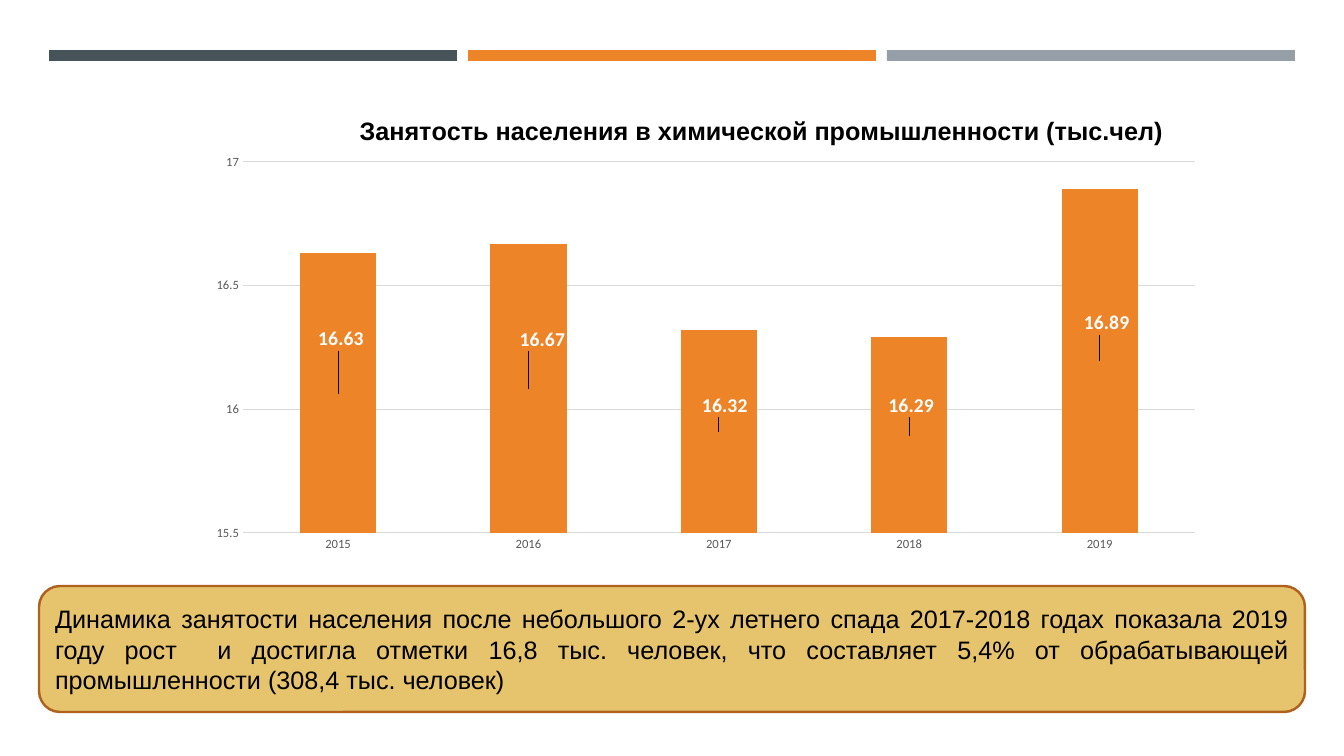
from lxml.etree import SubElement
from pptx import Presentation
from pptx.chart.data import CategoryChartData
from pptx.dml.color import RGBColor
from pptx.enum.chart import XL_CHART_TYPE, XL_LABEL_POSITION, XL_TICK_MARK
from pptx.enum.shapes import MSO_SHAPE
from pptx.enum.text import MSO_ANCHOR, PP_ALIGN
from pptx.oxml.ns import qn
from pptx.util import Pt

SLATE = RGBColor(0x46, 0x53, 0x59)
ORANGE = RGBColor(0xED, 0x84, 0x28)
GRAY = RGBColor(0x96, 0x9F, 0xA7)
SAND = RGBColor(0xE6, 0xC4, 0x6D)
BROWN = RGBColor(0xAF, 0x62, 0x1E)
GRID = RGBColor(0xD9, 0xD9, 0xD9)
AXIS_TEXT = RGBColor(0x59, 0x59, 0x59)
BLACK = RGBColor(0, 0, 0)
WHITE = RGBColor(0xFF, 0xFF, 0xFF)

CHART_LEFT, CHART_TOP, CHART_WIDTH, CHART_HEIGHT = 197, 93, 1019, 468


def px(*lengths):
    """Turn pixels (100.8 to the inch) into EMU."""
    return [round(length * 914400 / 100.8) for length in lengths]


def set_layout(parent, index, settings):
    """Give a chart part a manual layout; lengths are px, stored as chart fractions."""
    for old_layout in parent.findall(qn("c:layout")):
        parent.remove(old_layout)
    layout = parent.makeelement(qn("c:layout"), {})
    parent.insert(index, layout)
    manual = SubElement(layout, qn("c:manualLayout"))
    for name, value in settings.items():
        if name in ("x", "w"):
            value = round(value / CHART_WIDTH, 4)
        elif name in ("y", "h"):
            value = round(value / CHART_HEIGHT, 4)
        SubElement(manual, qn(f"c:{name}")).set("val", str(value))


presentation = Presentation()
presentation.slide_width, presentation.slide_height = px(1344, 756)
slide = presentation.slides.add_slide(presentation.slide_layouts[6])

# Three bars across the top
for column, color in enumerate((SLATE, ORANGE, GRAY)):
    bar = slide.shapes.add_shape(
        MSO_SHAPE.RECTANGLE, *px(49 + column * 419, 50, 408, 11))
    bar.shadow.inherit = False
    bar.fill.solid()
    bar.fill.fore_color.rgb = color
    bar.line.fill.background()

# Employment chart
chart_data = CategoryChartData()
chart_data.categories = ["2015", "2016", "2017", "2018", "2019"]
chart_data.add_series("Series 1", (16.63, 16.67, 16.32, 16.29, 16.89))
chart = slide.shapes.add_chart(
    XL_CHART_TYPE.COLUMN_CLUSTERED,
    *px(CHART_LEFT, CHART_TOP, CHART_WIDTH, CHART_HEIGHT), chart_data).chart
chart.has_legend = False
chart.font.name = "Calibri"
chart.font.size = Pt(10)
chart.font.color.rgb = BLACK
set_layout(chart._chartSpace.chart.plotArea, 0, {
    "layoutTarget": "inner", "xMode": "edge", "yMode": "edge",
    "x": 243 - CHART_LEFT, "y": 162 - CHART_TOP, "w": 952, "h": 371})

# Chart title
chart.has_title = True
title = chart.chart_title
title.include_in_layout = False
paragraph = title.text_frame.paragraphs[0]
paragraph.text = "Занятость населения в химической промышленности (тыс.чел)"
paragraph.font.name = "Arial"
paragraph.font.size = Pt(18)
paragraph.font.bold = True
paragraph.font.color.rgb = BLACK
set_layout(title._element, 1, {
    "xMode": "edge", "yMode": "edge",
    "x": 355 - CHART_LEFT, "y": 110 - CHART_TOP})

# Axes
for axis in (chart.category_axis, chart.value_axis):
    axis.major_tick_mark = XL_TICK_MARK.NONE
    axis.minor_tick_mark = XL_TICK_MARK.NONE
    axis.format.line.fill.background()
    axis.tick_labels.font.name = "Calibri"
    axis.tick_labels.font.size = Pt(9)
    axis.tick_labels.font.color.rgb = AXIS_TEXT
value_axis = chart.value_axis
value_axis.minimum_scale = 15.5
value_axis.maximum_scale = 17
value_axis.major_unit = 0.5
value_axis.major_gridlines.format.line.color.rgb = GRID
value_axis.major_gridlines.format.line.width = Pt(0.75)

# Columns, with labels shifted from their centres
plot = chart.plots[0]
plot.gap_width = 150
plot.vary_by_categories = False
series = plot.series[0]
series.format.fill.solid()
series.format.fill.fore_color.rgb = ORANGE
label_shifts = ((3, -54), (14, -49), (6, -26), (2, -30), (7, -38))
for index in range(len(label_shifts)):
    label = series.points[index].data_label
    label.position = XL_LABEL_POSITION.CENTER
    label.font.name = "Calibri"
    label.font.size = Pt(14)
    label.font.bold = True
    label.font.color.rgb = WHITE
label_elements = chart._chartSpace.xpath(".//c:dLbl")
for element, (shift_x, shift_y) in zip(label_elements, label_shifts):
    set_layout(element, 1, {"x": shift_x, "y": shift_y})

# Conclusion box
box = slide.shapes.add_shape(MSO_SHAPE.ROUNDED_RECTANGLE, *px(39, 586, 1266, 126))
box.shadow.inherit = False
box.fill.solid()
box.fill.fore_color.rgb = SAND
box.line.color.rgb = BROWN
box.line.width = Pt(1.75)
box.text_frame.word_wrap = True
box.text_frame.vertical_anchor = MSO_ANCHOR.MIDDLE
paragraph = box.text_frame.paragraphs[0]
paragraph.text = (
    "Динамика занятости населения после небольшого 2-ух летнего спада "
    "2017-2018 годах показала 2019 году рост  и достигла отметки 16,8 тыс. "
    "человек, что составляет 5,4% от обрабатывающей промышленности "
    "(308,4 тыс. человек)")
paragraph.alignment = PP_ALIGN.JUSTIFY
paragraph.font.name = "Arial"
paragraph.font.size = Pt(18)
paragraph.font.color.rgb = BLACK

presentation.save("out.pptx")
